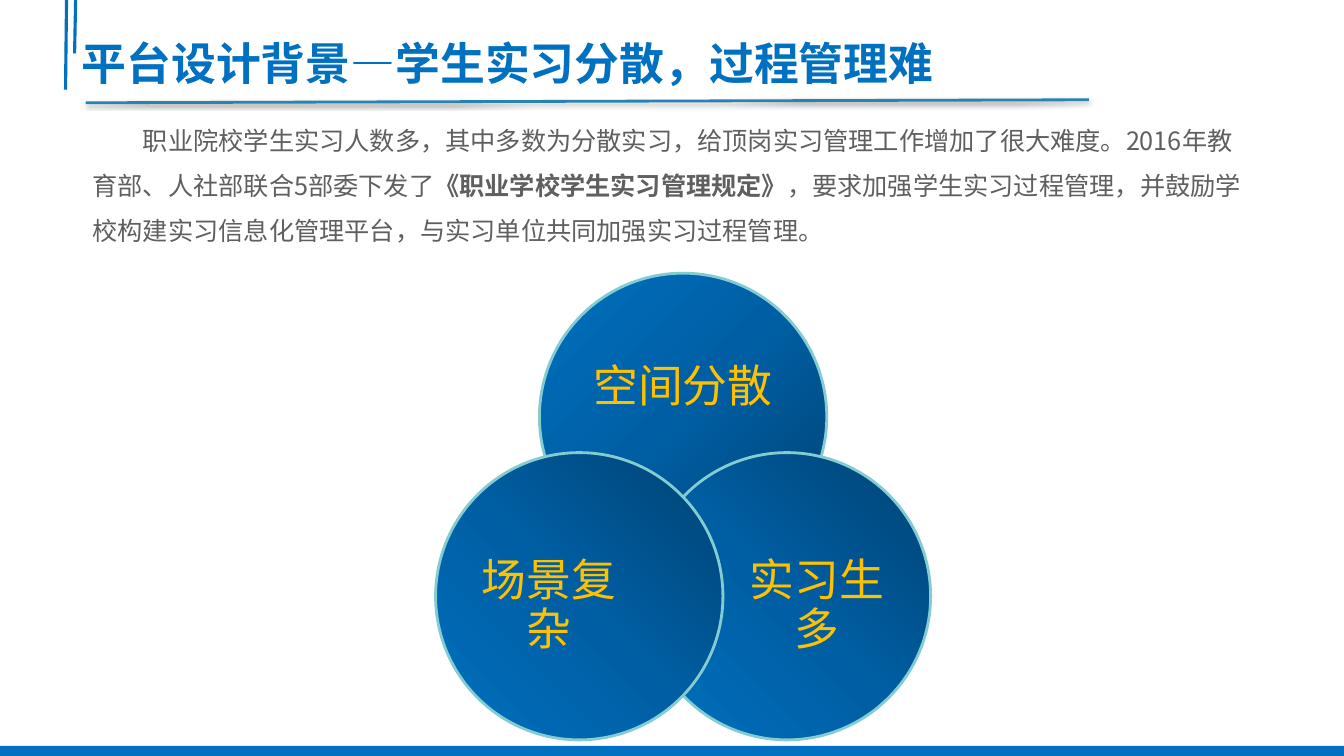
from dataclasses import dataclass
from lxml import etree
from pptx import Presentation
from pptx.dml.color import RGBColor
from pptx.enum.shapes import MSO_CONNECTOR, MSO_SHAPE
from pptx.enum.text import MSO_ANCHOR, PP_ALIGN
from pptx.oxml import parse_xml
from pptx.oxml.ns import nsdecls, qn
from pptx.util import Inches, Pt

STRAIGHT = MSO_CONNECTOR.STRAIGHT
RECT, OVAL = MSO_SHAPE.RECTANGLE, MSO_SHAPE.OVAL
TOP, MIDDLE = MSO_ANCHOR.TOP, MSO_ANCHOR.MIDDLE
LEFT, CENTER = PP_ALIGN.LEFT, PP_ALIGN.CENTER


@dataclass(frozen=True)
class Theme:
    blue: str = "0070C0"
    rule: str = "2A82B0"
    body: str = "5F5F5F"
    gold: str = "FFC000"
    ring: str = "82CCD2"
    stops: tuple = ((0, "004272"), (50, "005EA2"), (100, "0070C0"))
    head_font: str = "DejaVu Sans"
    body_font: str = "Noto Sans CJK SC"
    head_size: int = 32
    body_size: int = 18


class Deck:
    def __init__(self, theme):
        self.theme = theme
        self.prs = Presentation()
        self.prs.slide_width = Inches(13.33)
        self.prs.slide_height = Inches(7.5)
        self.s = self.prs.slides.add_slide(self.prs.slide_layouts[6])

    def line(self, start, end, color, width, shadow=False):
        ln = self.s.shapes.add_connector(STRAIGHT, *map(Inches, start + end))
        ln.line.color.rgb = RGBColor.from_string(color)
        ln.line.width = Pt(width)
        effects = etree.SubElement(ln._element.spPr, qn("a:effectLst"))
        if shadow:
            effects.append(parse_xml(
                f'<a:outerShdw {nsdecls("a")} blurRad="{Pt(3.1)}" dist="{Pt(1.6)}" '
                'dir="5400000" rotWithShape="0"><a:srgbClr val="000000">'
                '<a:alpha val="38000"/></a:srgbClr></a:outerShdw>'))

    def shape(self, kind, box, fill):
        sp = self.s.shapes.add_shape(kind, *map(Inches, box))
        sp.shadow.inherit = False
        sp.fill.solid()
        sp.fill.fore_color.rgb = RGBColor.from_string(fill)
        sp.line.fill.background()
        return sp

    def circle(self, box, focus):
        sp = self.shape(OVAL, box, self.theme.blue)
        sp.line.color.rgb = RGBColor.from_string(self.theme.ring)
        sp.line.width = Pt(2)
        stops = "".join(f'<a:gs pos="{pos * 1000}"><a:srgbClr val="{color}"/></a:gs>'
                        for pos, color in self.theme.stops)
        sides = " ".join(f'{side}="{pct * 1000}"' for side, pct in zip("ltrb", focus))
        grad = parse_xml(
            f'<a:gradFill {nsdecls("a")} rotWithShape="1"><a:gsLst>{stops}</a:gsLst>'
            f'<a:path path="circle"><a:fillToRect {sides}/></a:path></a:gradFill>')
        spPr = sp._element.spPr
        spPr.replace(spPr.find(qn("a:solidFill")), grad)

    def text(self, box, runs, size, font, color, inset=(0, 0), anchor=TOP,
             align=LEFT, spacing=1.0, indent=0):
        tf = self.s.shapes.add_textbox(*map(Inches, box)).text_frame
        tf.word_wrap = True
        tf.vertical_anchor = anchor
        tf.margin_left = tf.margin_right = Inches(inset[0])
        tf.margin_top = tf.margin_bottom = Inches(inset[1])
        p = tf.paragraphs[0]
        p.alignment = align
        p.line_spacing = spacing
        if indent:
            p._p.get_or_add_pPr().set("indent", str(Inches(indent)))
        for words, bold in runs:
            r = p.add_run()
            r.text = words
            r.font.size = Pt(size)
            r.font.name = font
            r.font.bold = bold
            r.font.color.rgb = RGBColor.from_string(color)
            ea = etree.SubElement(r._r.get_or_add_rPr(), qn("a:ea"))
            ea.set("typeface", self.theme.body_font)


def main():
    theme = Theme()
    deck = Deck(theme)

    deck.text((0.68, 0.28, 12, 0.84), [("平台设计背景—学生实习分散，过程管理难", True)],
              theme.head_size, theme.head_font, theme.blue, inset=(0.13, 0.07))
    for x, length in ((0.66, 0.89), (0.75, 0.53)):
        deck.line((x, 0), (x - 0.01, length), theme.blue, 2.25)
    deck.shape(RECT, (0, 7.4, 13.33, 0.1), theme.blue)
    deck.line((0.85, 1.02), (10.8, 0.99), theme.rule, 2, shadow=True)

    deck.text((0.82, 1.04, 11.6, 1.46), [
        ("职业院校学生实习人数多，其中多数为分散实习，给顶岗实习管理工作增加了很大难度。"
         "2016年教育部、人社部联合5部委下发了", False),
        ("《职业学校学生实习管理规定》", True),
        ("，要求加强学生实习过程管理，并鼓励学校构建实习信息化管理平台，"
         "与实习单位共同加强实习过程管理。", False),
    ], theme.body_size, theme.body_font, theme.body, inset=(0.1, 0.05),
        spacing=1.5, indent=0.5)

    diameter = 2.85
    bottom_right, top_right = (100, 100, 0, 0), (100, 0, 0, 100)
    circles = (
        ("空间分散", 5.35, 2.71, bottom_right, (5.73, 3.21, 2.09, 1.28)),
        ("实习生多", 6.38, 4.49, top_right, (7.25, 5.23, 1.71, 1.57)),
        ("场景复杂", 4.32, 4.49, top_right, (4.59, 5.23, 1.71, 1.57)),
    )
    for label, x, y, focus, label_box in circles:
        deck.circle((x, y, diameter, diameter), focus)
        deck.text(label_box, [(label, False)], theme.head_size, theme.head_font,
                  theme.gold, anchor=MIDDLE, align=CENTER, spacing=0.9)

    deck.prs.save("out.pptx")


if __name__ == "__main__":
    main()
